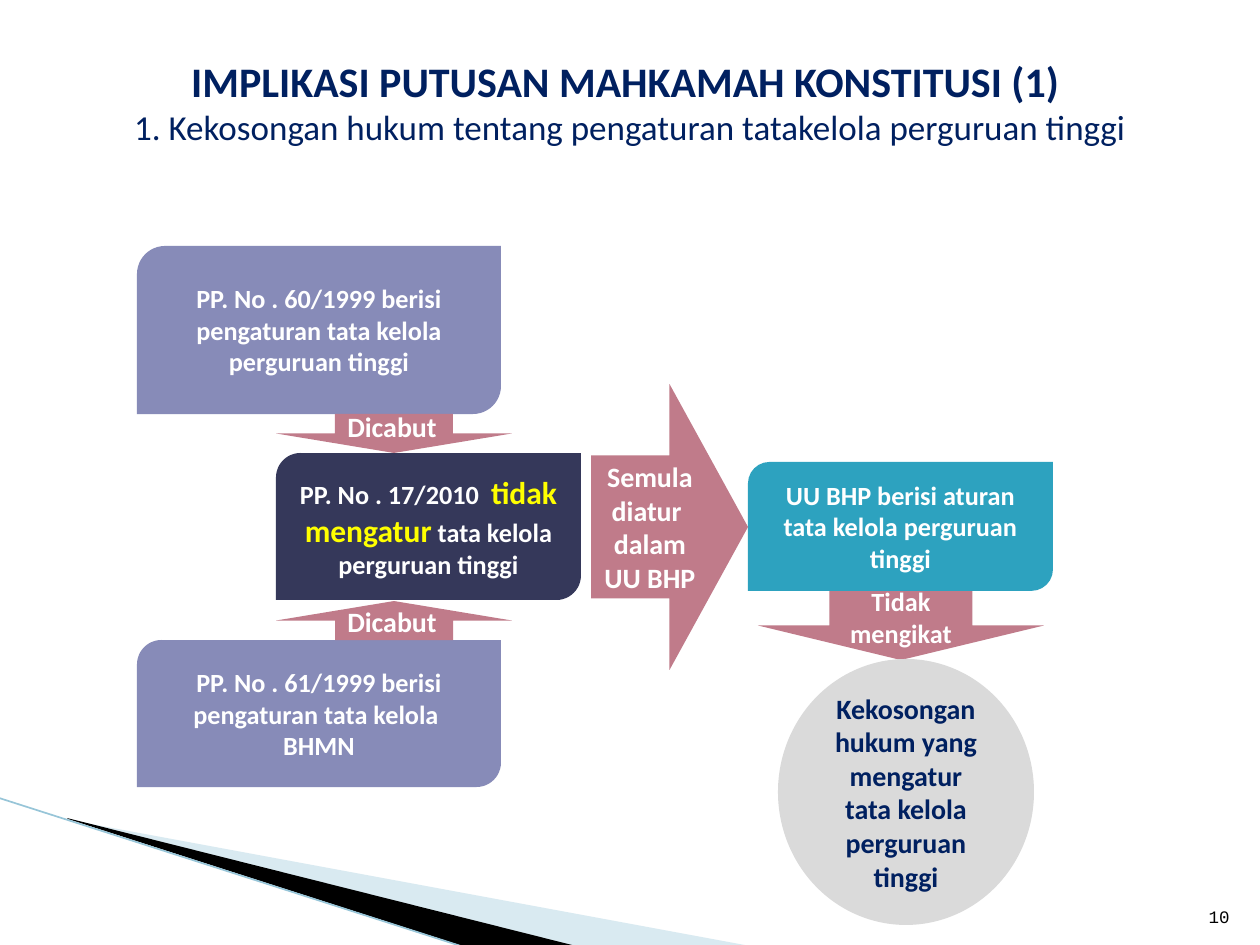
"""Build the slide on the implications of the constitutional court ruling."""
from lxml import etree
from pptx import Presentation
from pptx import util as u
from pptx.dml.color import RGBColor
from pptx.enum import shapes, text
from pptx.oxml.ns import qn

SCALE = 914400 / 126
WHITE, NAVY, YELLOW, BLACK = "FFFFFF", "002060", "FFFF00", "000000"
TEAL, LILAC, INDIGO, ROSE, GREY = "2DA2BF", "878BB8", "35385A", "C07B8A", "DADADA"
KIND = shapes.MSO_SHAPE
BOX, DOWN, RIGHT, OVAL = (KIND.ROUND_2_DIAG_RECTANGLE, KIND.DOWN_ARROW,
                          KIND.RIGHT_ARROW, KIND.OVAL)
LEFT, CENTER, END = text.PP_ALIGN.LEFT, text.PP_ALIGN.CENTER, text.PP_ALIGN.RIGHT
TOP, MIDDLE, BOTTOM = text.MSO_ANCHOR.TOP, text.MSO_ANCHOR.MIDDLE, text.MSO_ANCHOR.BOTTOM

SWOOSHES = [
    ([(69, 820), (750, 946), (575, 946), (69, 819)], "A0CBDC", 40),
    ([(67, 818), (576, 946), (469, 948), (68, 819)], BLACK, 100),
]
EDGE = (-1, 798, 467, 948)

# fmt: off
STEPS = [
    (BOX, (748, 462, 305, 129), TEAL, 0, 15, WHITE,
     [["UU BHP berisi aturan tata kelola perguruan tinggi"]]),
    (BOX, (137, 246, 364, 168), LILAC, 0, 15, WHITE,
     [["PP. No . 60/1999 berisi pengaturan tata kelola perguruan tinggi"]]),
    (BOX, (137, 640, 364, 147), LILAC, 0, 15, WHITE,
     [["PP. No . 61/1999 berisi pengaturan tata kelola "], ["BHMN"]]),
    (BOX, (276, 453, 305, 147), INDIGO, 0, 15, WHITE,
     [["PP. No . 17/2010  ", ("tidak mengatur", 18, YELLOW), " tata kelola perguruan tinggi"]]),
    (DOWN, (276, 414, 236, 39), ROSE, 0, 15, WHITE, []),
    (DOWN, (276, 601, 236, 39), ROSE, 180, 15, WHITE, []),
    (RIGHT, (591, 384, 157, 286), ROSE, 0, 16, WHITE, [["Semula diatur  dalam UU BHP"]]),
    (DOWN, (758, 591, 286, 69), ROSE, 0, 15, WHITE, [["Tidak mengikat"]]),
    (OVAL, (778, 659, 256, 266), GREY, 0, 16, NAVY,
     [["Kekosongan hukum yang mengatur tata kelola perguruan tinggi"]]),
]
TITLE = [["IMPLIKASI PUTUSAN MAHKAMAH KONSTITUSI (1) "],
         ["1. Kekosongan hukum tentang pengaturan tatakelola perguruan tinggi"]]
# fmt: on
REVOKED = [(335, 403, 116, 47), (335, 598, 116, 47)]


def px(value):
    return u.Emu(round(value * SCALE))


def rgb(value):
    return RGBColor.from_string(value)


def paint(shape, color, alpha=100):
    shape.shadow.inherit = False
    shape.fill.solid()
    shape.fill.fore_color.rgb = rgb(color)
    shape.line.fill.background()
    if alpha < 100:
        swatch = shape.fill._xPr.find(qn("a:solidFill"))[0]
        etree.SubElement(swatch, qn("a:alpha"), val=str(alpha * 1000))


def write(shape, paragraphs, size, color, align=CENTER, anchor=MIDDLE,
          bold=True, face="Calibri", wrap=True):
    frame = shape.text_frame
    frame.word_wrap = wrap
    frame.vertical_anchor = anchor
    for index, pieces in enumerate(paragraphs):
        paragraph = frame.add_paragraph() if index else frame.paragraphs[0]
        paragraph.alignment = align
        font = paragraph.font
        font.name, font.size, font.bold = face, u.Pt(size), bold
        font.color.rgb = rgb(color)
        for piece in pieces:
            run = paragraph.add_run()
            if isinstance(piece, tuple):
                run.text, points, accent = piece
                run.font.size = u.Pt(points)
                run.font.color.rgb = rgb(accent)
            else:
                run.text = piece
    return frame


def main():
    deck = Presentation()
    deck.slide_width, deck.slide_height = px(1260), px(945)
    canvas = deck.slides.add_slide(deck.slide_layouts[6]).shapes

    for points, color, alpha in SWOOSHES:
        outline = canvas.build_freeform(*points[0], scale=SCALE)
        outline.add_line_segments(points[1:], close=True)
        paint(outline.convert_to_shape(), color, alpha)

    edge = canvas.add_connector(shapes.MSO_CONNECTOR.STRAIGHT, *map(px, EDGE))
    edge.line.color.rgb = rgb("97C5D8")
    edge.line.width = u.Pt(0.95)
    etree.SubElement(edge._element.spPr, qn("a:effectLst"))

    for kind, place, fill, turn, size, color, wording in STEPS:
        step = canvas.add_shape(kind, *map(px, place))
        paint(step, fill)
        step.rotation = turn
        write(step, wording, size, color)

    for place in REVOKED:
        revoked = canvas.add_textbox(*map(px, place))
        write(revoked, [["Dicabut"]], 16, WHITE, LEFT, TOP, wrap=False)

    heading = canvas.add_textbox(*map(px, (118, 49, 1024, 106)))
    subtitle = write(heading, TITLE, 24, NAVY, anchor=TOP).paragraphs[1]
    subtitle.font.size, subtitle.font.bold = u.Pt(20), False

    number = canvas.add_textbox(*map(px, (1192, 883, 50, 50)))
    write(number, [["10"]], 10, BLACK, END, BOTTOM, False, "Courier New")
    deck.save("out.pptx")


if __name__ == "__main__":
    main()
